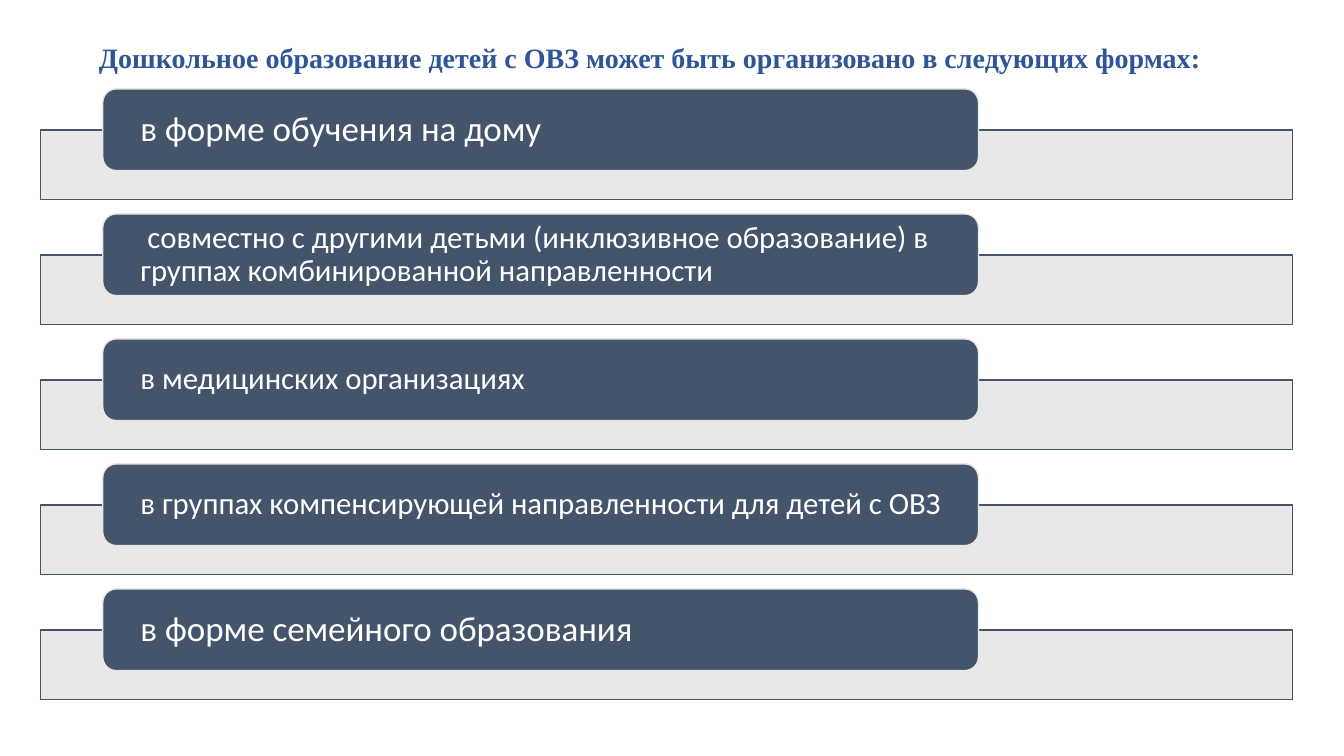
from lxml import etree
from pptx import Presentation
from pptx.dml.color import RGBColor
from pptx.enum.shapes import MSO_SHAPE as Preset
from pptx.enum.text import MSO_ANCHOR as Anchor, PP_ALIGN as Align
from pptx.oxml.ns import qn
from pptx.util import Cm, Pt

WHITE = RGBColor(0xFF, 0xFF, 0xFF)
TITLE_BLUE = RGBColor(0x2F, 0x55, 0x97)
SLATE = RGBColor(0x44, 0x54, 0x6A)
LIGHT_GREY = RGBColor(0xE7, 0xE6, 0xE6)

TITLE = "Дошкольное образование детей с ОВЗ может быть организовано в следующих формах:"
FORMS = [
    ("в форме обучения на дому", 25),
    (" совместно с другими детьми (инклюзивное образование) в группах "
     "комбинированной направленности", 22),
    ("в медицинских организациях", 22),
    ("в группах компенсирующей направленности для детей с ОВЗ", 22),
    ("в форме семейного образования", 25),
]
FIRST_BAR_TOP = 3.28
FIRST_LABEL_TOP = 2.24
ROW_STEP = 3.15


class SlideBuilder:
    title_font = "Times New Roman"
    body_font = "Calibri"

    def __init__(self, slide):
        self.slide = slide

    def set_text(self, frame, text, font_name, size, color, bold=False):
        frame.word_wrap = True
        frame.vertical_anchor = Anchor.MIDDLE
        paragraph = frame.paragraphs[0]
        paragraph.text = text
        paragraph.alignment = Align.LEFT
        paragraph.line_spacing = 0.9
        font = paragraph.font
        font.name, font.size, font.bold = font_name, Pt(size), bold
        font.color.rgb = color

    def title(self, text):
        shape = self.slide.shapes.title
        shape.left, shape.top = Cm(2.24), Cm(0.58)
        shape.width, shape.height = Cm(29.21), Cm(1.83)
        self.set_text(shape.text_frame, text, self.title_font, 20, TITLE_BLUE, bold=True)

    def box(self, preset, left, top, width, height, fill, line):
        shape = self.slide.shapes.add_shape(
            preset, Cm(left), Cm(top), Cm(width), Cm(height))
        shape.shadow.inherit = False
        shape.fill.solid()
        shape.fill.fore_color.rgb = fill
        shape.line.color.rgb = line
        shape.line.width = Pt(1)
        return shape

    def bar(self, top):
        shape = self.box(Preset.RECTANGLE, 1.02, top, 31.55, 1.75, LIGHT_GREY, SLATE)
        color = shape.element.spPr.find(qn("a:solidFill"))[0]
        etree.SubElement(color, qn("a:alpha"), val="90000")

    def label(self, top, text, size):
        shape = self.box(Preset.ROUNDED_RECTANGLE, 2.59, top, 22.07, 2.06,
                         SLATE, LIGHT_GREY)
        frame = shape.text_frame
        frame.margin_left = frame.margin_right = Cm(0.85)
        frame.margin_top = frame.margin_bottom = 0
        self.set_text(frame, text, self.body_font, size, WHITE)


def main():
    presentation = Presentation()
    presentation.slide_width, presentation.slide_height = Cm(33.87), Cm(19.05)
    title_only = presentation.slide_layouts[5]
    builder = SlideBuilder(presentation.slides.add_slide(title_only))
    builder.title(TITLE)
    for row, (text, size) in enumerate(FORMS):
        offset = row * ROW_STEP
        builder.bar(FIRST_BAR_TOP + offset)
        builder.label(FIRST_LABEL_TOP + offset, text, size)
    presentation.save("out.pptx")


if __name__ == "__main__":
    main()
